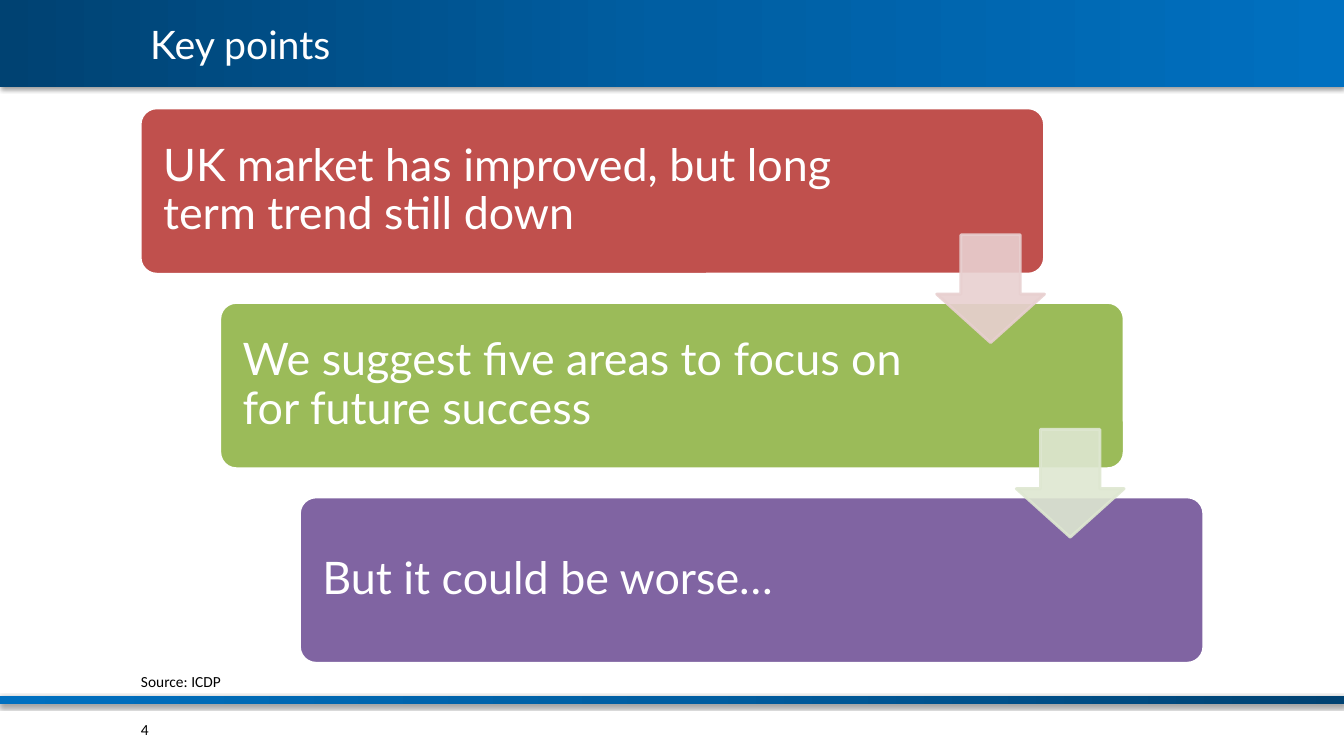
from dataclasses import dataclass

from lxml.etree import SubElement
from pptx import Presentation
from pptx.dml.color import RGBColor
from pptx.enum.shapes import MSO_SHAPE
from pptx.enum.text import MSO_ANCHOR, MSO_AUTO_SIZE, PP_ALIGN
from pptx.oxml import parse_xml
from pptx.oxml.ns import nsdecls, qn
from pptx.util import Inches, Pt


@dataclass(frozen=True)
class Theme:
    """Colours, fonts and type sizes of the slide."""
    white: str = "FFFFFF"
    black: str = "000000"
    band: tuple = ("004272", "005EA2", "0070C0")
    boxes: tuple = ("C0504D", "9BBB59", "8064A2")
    arrows: tuple = ("E8D0D0", "DEE7D1")
    font: str = "Lato"
    small_font: str = "Calibri"
    title_size: int = 28
    point_size: int = 32
    small_size: int = 11


THEME = Theme()
POINTS = (
    "UK market has improved, but long term trend still down",
    "We suggest five areas to focus on for future success",
    "But it could be worse…",
)
LEFT, TOP = 1.39, 1.07
STEP_X, STEP_Y = 0.79, 1.93
BOX_W, BOX_H = 8.97, 1.65
ARROW_DX, ARROW_DY, ARROW_SIZE = 7.9, 1.26, 1.07


def set_text(sp, text, font, size, color, insets=(0.1, 0.05, 0.1, 0.05)):
    """Write one left-aligned, vertically centred paragraph."""
    tf = sp.text_frame
    tf.vertical_anchor = MSO_ANCHOR.MIDDLE
    tf.margin_left, tf.margin_top, tf.margin_right, tf.margin_bottom = map(Inches, insets)
    p = tf.paragraphs[0]
    p.text = text
    p.alignment = PP_ALIGN.LEFT
    p.font.name, p.font.size = font, Pt(size)
    p.font.color.rgb = RGBColor.from_string(color)
    return p


def add_shape(slide, kind, at, fill, line):
    """Add a solid preset shape with a 2 pt outline."""
    sp = slide.shapes.add_shape(kind, *map(Inches, at))
    sp.shadow.inherit = False
    sp.fill.solid()
    sp.fill.fore_color.rgb = RGBColor.from_string(fill)
    sp.line.color.rgb = RGBColor.from_string(line)
    sp.line.width = Pt(2)
    return sp


def add_band(slide, top, height, angle):
    """Add a full-width gradient band with a soft shadow below."""
    sp = slide.shapes.add_shape(
        MSO_SHAPE.RECTANGLE, 0, Inches(top), Inches(13.33), Inches(height))
    sp.line.fill.background()
    stops = "".join(
        f'<a:gs pos="{i * 50000}"><a:srgbClr val="{c}"/></a:gs>'
        for i, c in enumerate(THEME.band))
    sp._element.spPr.find(qn("a:prstGeom")).addnext(parse_xml(
        f'<a:gradFill {nsdecls("a")} rotWithShape="1"><a:gsLst>{stops}</a:gsLst>'
        f'<a:lin ang="{angle * 60000}" scaled="0"/></a:gradFill>'))
    sp._element.spPr.append(parse_xml(
        f'<a:effectLst {nsdecls("a")}><a:outerShdw blurRad="{Pt(3.1)}" dist="{Pt(1.6)}" '
        f'dir="5400000" rotWithShape="0"><a:srgbClr val="{THEME.black}">'
        '<a:alpha val="38000"/></a:srgbClr></a:outerShdw></a:effectLst>'))


def add_point(slide, i, text):
    """Add one box of the staircase with its text."""
    at = (LEFT + i * STEP_X, TOP + i * STEP_Y, BOX_W, BOX_H)
    sp = add_shape(slide, MSO_SHAPE.ROUNDED_RECTANGLE, at, THEME.boxes[i], THEME.white)
    sp.adjustments[0] = 0.1
    p = set_text(sp, text, THEME.font, THEME.point_size, THEME.white, (0.18, 0.18, 2, 0.18))
    p.line_spacing = 0.9


def add_arrow(slide, i, color):
    """Add the translucent arrow from one box to the next."""
    at = (LEFT + i * STEP_X + ARROW_DX, TOP + i * STEP_Y + ARROW_DY, ARROW_SIZE, ARROW_SIZE)
    sp = add_shape(slide, MSO_SHAPE.DOWN_ARROW, at, color, color)
    sp.adjustments[0], sp.adjustments[1] = 0.55, 0.45
    for clr in sp._element.spPr.iter(qn("a:srgbClr")):
        SubElement(clr, qn("a:alpha"), val="90000")


def add_small_text(slide, text, at, wrap):
    """Add a small label at the foot of the slide."""
    sp = slide.shapes.add_textbox(*map(Inches, at))
    sp.text_frame.word_wrap = wrap
    set_text(sp, text, THEME.small_font, THEME.small_size, THEME.black)


def place_title(slide, text):
    """Move the title placeholder onto the top band."""
    sp = slide.shapes.title
    sp.left, sp.top, sp.width, sp.height = map(Inches, (LEFT, 0, 10.55, 0.86))
    sp.text_frame.auto_size = MSO_AUTO_SIZE.NONE
    set_text(sp, text, THEME.font, THEME.title_size, THEME.white)
    slide.shapes._spTree.append(sp._element)


def main():
    """Build and save the slide."""
    prs = Presentation()
    prs.slide_width, prs.slide_height = Inches(13.33), Inches(7.5)
    slide = prs.slides.add_slide(prs.slide_layouts[5])
    add_band(slide, 0, 0.86, 0)
    add_band(slide, 6.9, 0.08, 180)
    for i, text in enumerate(POINTS):
        add_point(slide, i, text)
    for i, color in enumerate(THEME.arrows):
        add_arrow(slide, i, color)
    add_small_text(slide, "4", (1.3, 7.09, 0.65, 0.3), True)
    place_title(slide, "Key points")
    add_small_text(slide, "Source: ICDP", (1.3, 6.61, 1, 0.29), False)
    prs.save("out.pptx")


if __name__ == "__main__":
    main()
